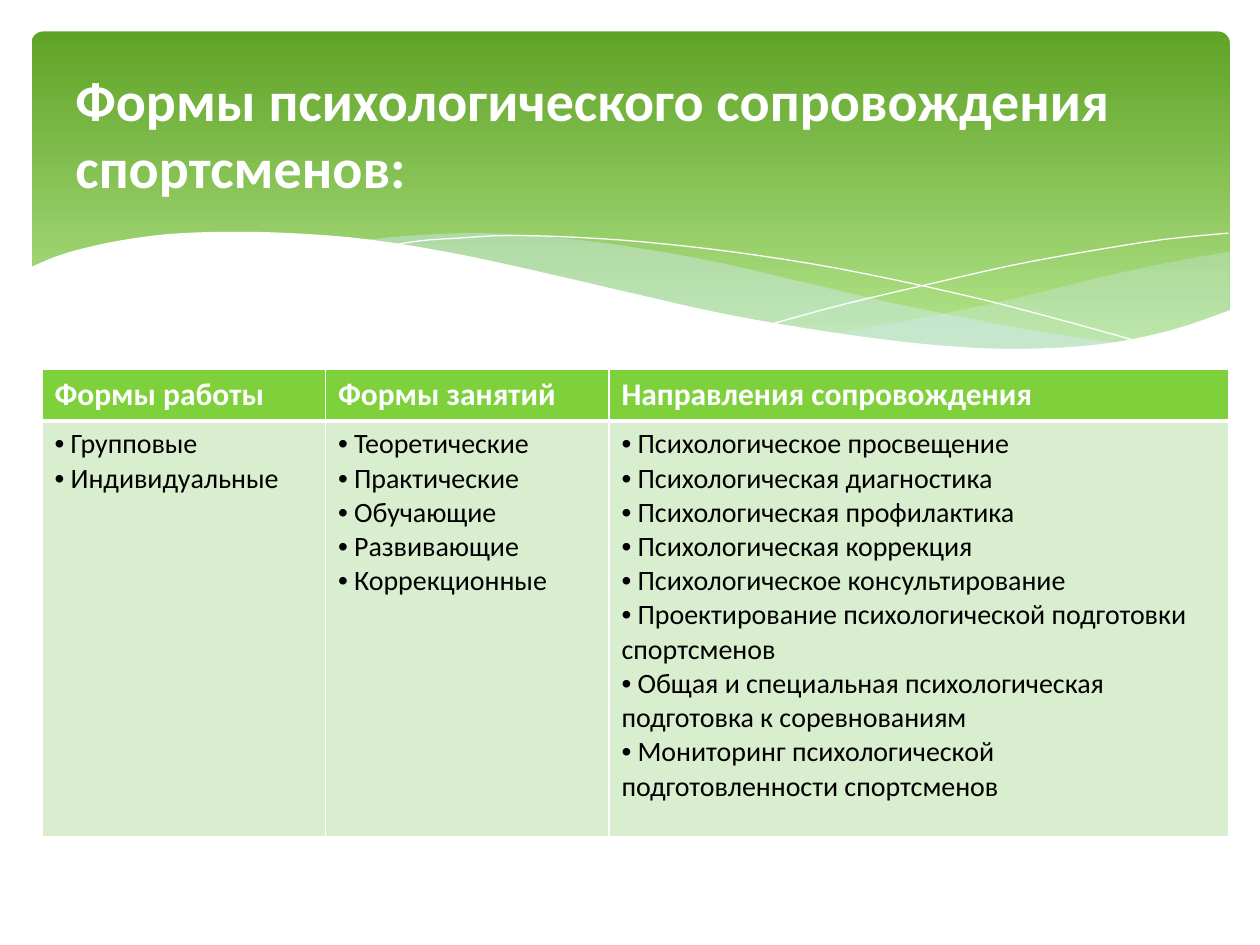
from lxml import etree
from pptx import Presentation
from pptx import util as u
from pptx.dml import color
from pptx.enum import shapes, text
from pptx.oxml import ns

HEADING = "Формы психологического сопровождения спортсменов:"
COLUMNS = [
    ("Формы работы", 162, ["Групповые", "Индивидуальные"]),
    ("Формы занятий", 162,
     ["Теоретические", "Практические", "Обучающие", "Развивающие", "Коррекционные"]),
    ("Направления сопровождения", 354.2, [
        "Психологическое просвещение",
        "Психологическая диагностика",
        "Психологическая профилактика",
        "Психологическая коррекция",
        "Психологическое консультирование",
        "Проектирование психологической подготовки спортсменов",
        "Общая и специальная психологическая подготовка к соревнованиям",
        "Мониторинг психологической подготовленности спортсменов",
    ]),
]
ROW_HEIGHTS = [29.5, 237.6]
FONT = "Calibri"
COLORS = {
    "white": "FFFFFF", "black": "000000", "banner_top": "5FA326",
    "banner_bottom": "B2E389", "mist": "D6ECFF", "header": "7FD13B", "body": "D8EECE",
}

RIGHT_WAVE = [
    [(702, 144), (673.2, 149), (641.5, 155.5), (620, 160.6), (579.6, 170.6),
     (542.2, 178.6), (508.3, 185), (475.9, 190.8)],
    [(475.9, 190.8), (507.6, 195.1), (545, 198.7), (578.2, 200.1), (614.9, 198.7),
     (645.8, 194.4), (673.2, 188.6), (702.7, 177.8)],
    [(702.7, 177.8), (702.7, 144)],
]
MIDDLE_WAVE = [
    [(643, 196.6), (602.6, 190.8), (558, 182.9), (508.3, 172.8), (452.9, 159.8),
     (409.7, 149.8), (370.1, 142.6), (334.8, 137.5), (302.4, 134.6), (273.6, 133.2),
     (247.7, 133.9), (225.4, 135.4), (205.9, 137.5)],
    [(205.9, 137.5), (246.2, 143.3), (290.9, 151.9), (323.3, 159.8), (381.6, 172.8),
     (432.7, 183.6), (478.8, 191.5), (519.8, 197.3), (556.6, 199.4), (589, 200.2),
     (617, 199.4), (643, 196.6)],
]
FALLING_LINE = [
    [(222.5, 140.4), (241.2, 137.5), (261.4, 136.1), (288.7, 134.6), (324, 135.4),
     (367.2, 138.2), (419, 144), (478.8, 153.4), (547.2, 167.8), (598.3, 180.7),
     (653, 195.8)],
]
RISING_LINE = [
    [(441.4, 185), (483.8, 173.5), (538.6, 160.6), (580.3, 151.2), (623.5, 143.3),
     (665.3, 136.8), (702, 133.2)],
]
WHITE_WAVE = [
    [(703.4, 177.1), (669.6, 188.6), (630, 196.6), (582.5, 199.4), (535.7, 197.3),
     (481, 190.8), (416.9, 180), (362.2, 167.8), (321.8, 158.4), (262.8, 145.4),
     (210.2, 136.8), (165.6, 133.2), (127.4, 132.5), (95, 133.9), (68.4, 137.5),
     (48.2, 141.8), (33.1, 146.2), (20.9, 151.2), (16.6, 153.4)],
    [(16.6, 236.9), (703.4, 236.9)],
]
WAVES = [
    (RIGHT_WAVE, "mist", 29),
    (MIDDLE_WAVE, "mist", 40),
    (FALLING_LINE, None, None),
    (RISING_LINE, None, None),
    (WHITE_WAVE, "white", 100),
]


def rgb(name):
    return color.RGBColor.from_string(COLORS[name])


def smooth_curve(knots, steps=4):
    if len(knots) == 2:
        return knots
    padded = [knots[0], *knots, knots[-1]]
    curve = [knots[0]]
    for a, b, c, d in zip(padded, padded[1:], padded[2:], padded[3:]):
        for step in range(1, steps + 1):
            t = step / steps
            curve.append(tuple(
                (2 * q + (r - p) * t + (2 * p - 5 * q + 4 * r - s) * t ** 2
                 + (3 * q - p - 3 * r + s) * t ** 3) / 2
                for p, q, r, s in zip(a, b, c, d)))
    return curve


def add_wave(slide, curves, fill, opacity):
    outline = [(u.Pt(x), u.Pt(y)) for knots in curves for x, y in smooth_curve(knots)]
    builder = slide.shapes.build_freeform(*outline[0], scale=1.0)
    builder.add_line_segments(outline[1:], close=fill is not None)
    wave = builder.convert_to_shape()
    wave.shadow.inherit = False
    if fill is None:
        wave.fill.background()
        wave.line.color.rgb = rgb("white")
        wave.line.width = u.Pt(0)
        return
    wave.fill.solid()
    wave.fill.fore_color.rgb = rgb(fill)
    wave.line.fill.background()
    if opacity < 100:
        tint = wave.fill._xPr.find(".//" + ns.qn("a:srgbClr"))
        etree.SubElement(tint, ns.qn("a:alpha"), val=str(opacity * 1000))


def style_font(font, size, ink, bold):
    font.name, font.size, font.bold = FONT, u.Pt(size), bold
    font.color.rgb = rgb(ink)


def add_bullet(paragraph):
    properties = paragraph._p.get_or_add_pPr()
    properties.set("marL", "0")
    properties.set("indent", "0")
    etree.SubElement(properties, ns.qn("a:buFont"), typeface="Arial")
    etree.SubElement(properties, ns.qn("a:buChar"), char="•")


def fill_cell(cell, lines, fill, size, ink, bulleted, borders):
    properties = cell._tc.get_or_add_tcPr()
    for side, width in borders.items():
        border = etree.SubElement(properties, ns.qn("a:" + side), w=str(u.Pt(width)))
        solid = etree.SubElement(border, ns.qn("a:solidFill"))
        etree.SubElement(solid, ns.qn("a:srgbClr"), val=COLORS["white"])
    cell.fill.solid()
    cell.fill.fore_color.rgb = rgb(fill)
    cell.text_frame.text = "\n".join(lines)
    for paragraph in cell.text_frame.paragraphs:
        if bulleted:
            add_bullet(paragraph)
        for run in paragraph.runs:
            style_font(run.font, size, ink, not bulleted)


def add_banner(slide):
    banner = slide.shapes.add_shape(
        shapes.MSO_SHAPE.ROUNDED_RECTANGLE, u.Pt(18), u.Pt(18), u.Pt(684.7), u.Pt(194.4))
    banner.adjustments[0] = 0.034
    banner.shadow.inherit = False
    banner.line.fill.background()
    banner.fill.gradient()
    banner.fill.gradient_angle = 270
    stops = [(0, "banner_top"), (0.9, "banner_bottom")]
    for stop, (position, tone) in zip(banner.fill.gradient_stops, stops):
        stop.position = position
        stop.color.rgb = rgb(tone)


def add_forms_table(slide):
    widths = [width for _, width, _ in COLUMNS]
    forms = slide.shapes.add_table(
        2, len(COLUMNS), u.Pt(24), u.Pt(211), u.Pt(sum(widths)), u.Pt(sum(ROW_HEIGHTS))).table
    for row, height in zip(forms.rows, ROW_HEIGHTS):
        row.height = u.Pt(height)
    thin = {"lnL": 1, "lnR": 1, "lnT": 1, "lnB": 1}
    for index, (header, width, items) in enumerate(COLUMNS):
        forms.columns[index].width = u.Pt(width)
        fill_cell(forms.cell(0, index), [header], "header", 18, "white", False,
                  {**thin, "lnB": 3})
        fill_cell(forms.cell(1, index), [" " + item for item in items], "body", 16,
                  "black", True, {**thin, "lnT": 3})


def add_heading(slide):
    heading = slide.shapes.add_textbox(u.Pt(36), u.Pt(26.6), u.Pt(648), u.Pt(98.6)).text_frame
    heading.word_wrap = True
    heading.vertical_anchor = text.MSO_ANCHOR.MIDDLE
    heading.text = HEADING
    style_font(heading.paragraphs[0].runs[0].font, 32, "white", True)


def main():
    deck = Presentation()
    deck.slide_width, deck.slide_height = u.Pt(720), u.Pt(540)
    slide = deck.slides.add_slide(deck.slide_layouts[6])
    add_banner(slide)
    for wave in WAVES:
        add_wave(slide, *wave)
    add_forms_table(slide)
    add_heading(slide)
    deck.save("out.pptx")


if __name__ == "__main__":
    main()
